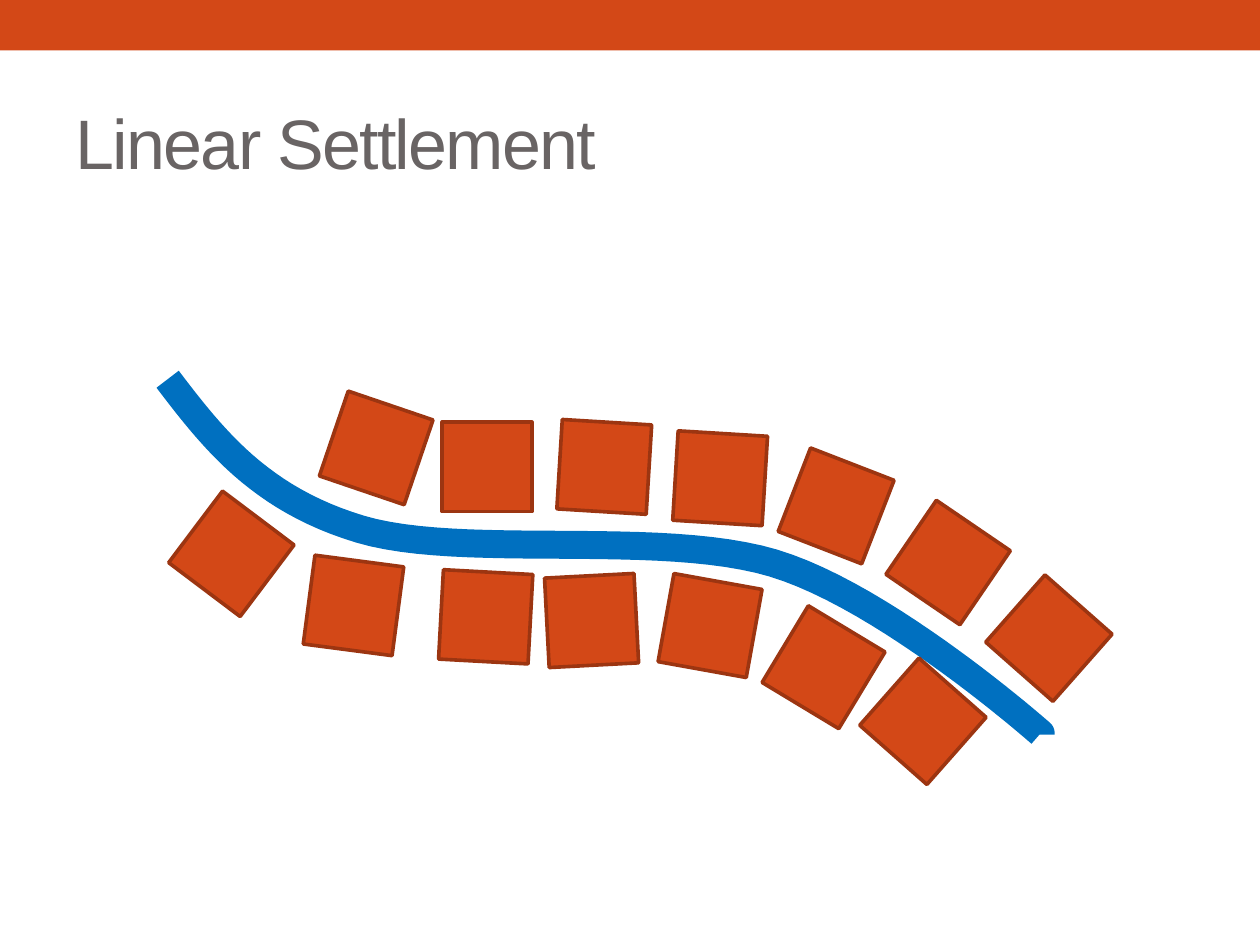
"""Build the Linear Settlement slide: houses strung along both banks of a river."""
import pptx
import pptx.dml.color
import pptx.enum.shapes
import pptx.enum.text
import pptx.oxml
import pptx.oxml.ns
import pptx.util

Pt = pptx.util.Pt
ORANGE, RUST, BLUE, GRAY = "D34817", "9C3511", "0070C0", "696464"
HOUSE_SIZE = 51.2


def color(hex_value):
    return pptx.dml.color.RGBColor.from_string(hex_value)


def outline(shape, hex_value, width):
    shape.shadow.inherit = False
    shape.line.color.rgb = color(hex_value)
    shape.line.width = Pt(width)
    join = pptx.oxml.parse_xml(f"<a:round {pptx.oxml.ns.nsdecls('a')}/>")
    shape.line._get_or_add_ln().append(join)


presentation = pptx.Presentation()
presentation.slide_width, presentation.slide_height = Pt(720), Pt(540)
slide = presentation.slides.add_slide(presentation.slide_layouts[5])
rectangle = pptx.enum.shapes.MSO_SHAPE.RECTANGLE

bar = slide.shapes.add_shape(rectangle, Pt(0), Pt(0), Pt(720), Pt(28.8))
bar.shadow.inherit = False
bar.fill.solid()
bar.fill.fore_color.rgb = color(ORANGE)
bar.line.fill.background()

title = slide.shapes.title
title.left, title.top, title.width, title.height = Pt(36), Pt(42), Pt(648), Pt(78)
title.text_frame.text = "Linear Settlement"
title.text_frame.vertical_anchor = pptx.enum.text.MSO_ANCHOR.MIDDLE
paragraph = title.text_frame.paragraphs[0]
paragraph.alignment = pptx.enum.text.PP_ALIGN.LEFT
paragraph.font.name = "Arial"
paragraph.font.size = Pt(40)
paragraph.font.color.rgb = color(GRAY)
paragraph.font._rPr.set("spc", "-100")

river_curves = [
    [(95.8, 216.7), (121.7, 250.6), (148.3, 285.1), (205.9, 302.4)],
    [(205.9, 302.4), (263.5, 319.7), (377.3, 302.4), (442.1, 321.8)],
    [(442.1, 321.8), (506.9, 341.3), (594.7, 419), (594.7, 419)],
]
steps = 24
river_points = []
for curve in river_curves:
    for step in range(1, steps + 1):
        t = step / steps
        weights = [(1 - t) ** 3, 3 * t * (1 - t) ** 2, 3 * t ** 2 * (1 - t), t ** 3]
        x, y = (sum(w * p[axis] for w, p in zip(weights, curve)) for axis in (0, 1))
        river_points.append((Pt(x), Pt(y)))
river_points.append((Pt(594.7), Pt(419.8)))
start_x, start_y = river_curves[0][0]
builder = slide.shapes.build_freeform(Pt(start_x), Pt(start_y))
builder.add_line_segments(river_points, close=False)
river = builder.convert_to_shape()
river.fill.background()
outline(river, BLUE, 16)

houses = [
    (106.6, 290.9, 37), (189.4, 230.4, 18.8), (252.7, 241.2, 0), (319.7, 241.2, 3.5),
    (385.9, 247.7, 3.5), (452.2, 263.5, 21.2), (516.2, 295.9, 34.3), (573.8, 339.1, 41.4),
    (501.8, 386.6, 41.4), (445, 355.7, 31.1), (380.2, 331.9, 10.2), (312.5, 329, 357),
    (252, 326.9, 3.1), (176.4, 320.4, 7.5),
]
for left, top, angle in houses:
    house = slide.shapes.add_shape(rectangle, Pt(left), Pt(top), Pt(HOUSE_SIZE), Pt(HOUSE_SIZE))
    house.rotation = angle
    house.fill.solid()
    house.fill.fore_color.rgb = color(ORANGE)
    outline(house, RUST, 2.08)

presentation.save("out.pptx")
